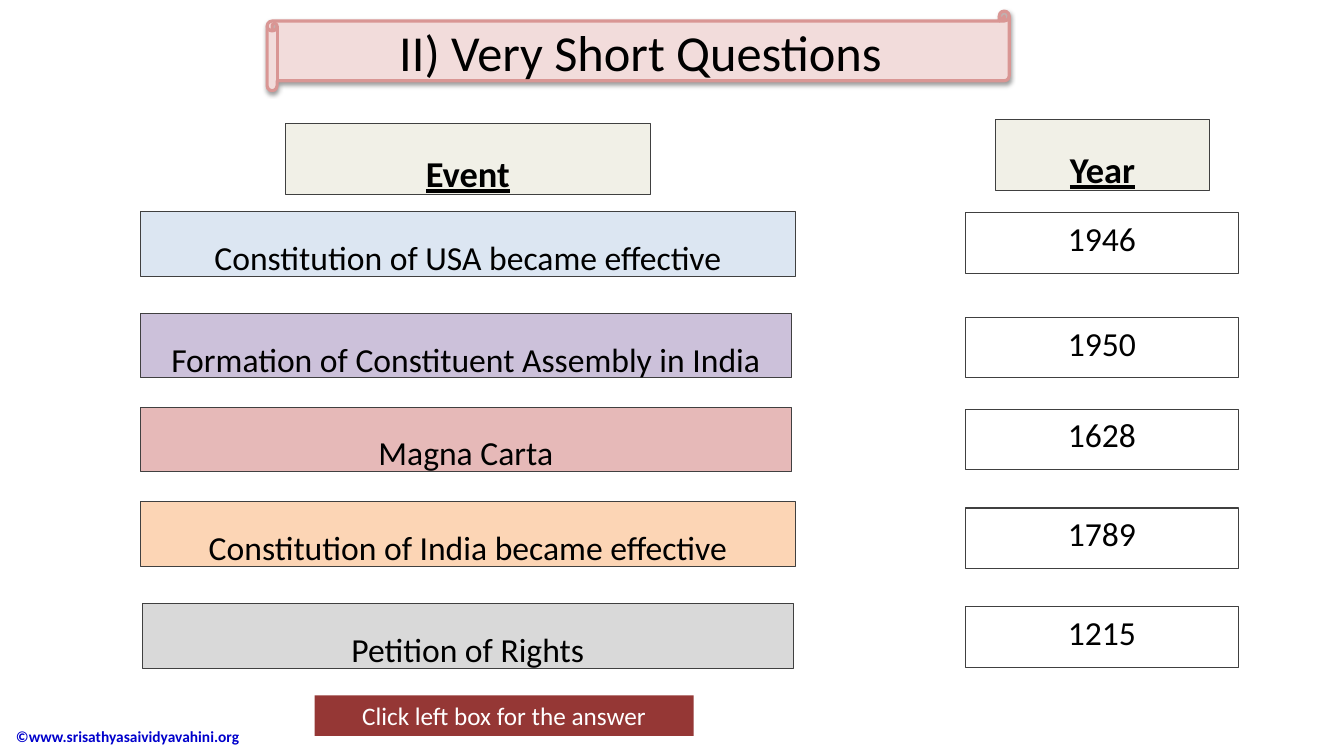
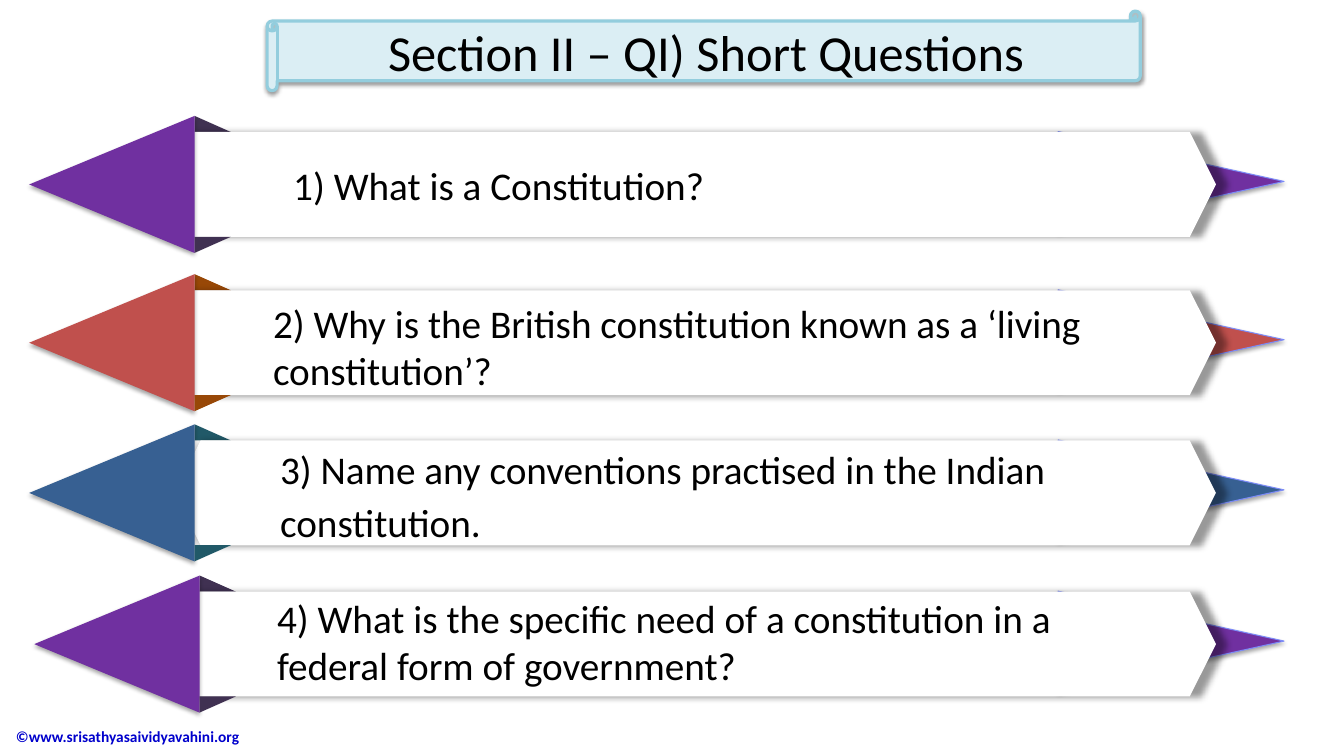
from dataclasses import dataclass
from typing import NamedTuple, Optional

from lxml.etree import SubElement
from pptx import Presentation
from pptx.dml.color import RGBColor
from pptx.enum.shapes import MSO_SHAPE as Preset
from pptx.enum.text import MSO_ANCHOR as Anchor, MSO_AUTO_SIZE as AutoSize, PP_ALIGN as Align
from pptx.oxml.ns import qn
from pptx.util import Inches, Pt

FONT = "Calibri"
COLORS = {
    "black": "000000", "white": "FFFFFF", "footer": "0000CC", "outline": "404040",
    "rose": "F2DCDB", "rose_edge": "D99694", "aqua": "DBEEF4", "aqua_edge": "93CDDD",
    "header": "F1F0E7", "hint": "953735",
    "blue": "DCE6F2", "lilac": "CCC1DA", "pink": "E6B9B8", "orange": "FCD5B5", "grey": "D9D9D9",
    "purple": "7030A0", "purple_fold": "403152", "red": "C0504D", "red_fold": "984807",
    "navy": "376092", "navy_fold": "215968", "tail_edge": "7C8BF8",
}


class Shadow(NamedTuple):
    alpha: int  # percent
    blur: float  # points
    distance: float  # points
    direction: int  # degrees
    stretch: int = 100  # horizontal scale in percent


TITLE_SHADOW = Shadow(38, 3.1, 1.6, 90)
TIP_SHADOW = Shadow(35, 3.1, 1.8, 90)
BAND_SHADOW = Shadow(40, 5, 0, 0, 101)


class Area(NamedTuple):
    left: float
    top: float
    width: float
    height: float

    def lengths(self) -> list:
        return [Inches(value) for value in self]


@dataclass
class MatchRow:
    event: str
    event_area: Area
    color: str
    year: str
    year_top: float


@dataclass
class Question:
    text: str
    text_area: Area
    band_left: float
    band_top: float
    color: str
    fold_left: float = 1.93
    spacing: Optional[float] = None


MATCH_ROWS = [
    MatchRow("Constitution of USA became effective", Area(1.39, 2.1, 6.5, 0.64), "blue", "1946", 2.11),
    MatchRow("Formation of Constituent Assembly in India", Area(1.39, 3.11, 6.46, 0.64), "lilac", "1950", 3.15),
    MatchRow("Magna Carta", Area(1.39, 4.04, 6.46, 0.64), "pink", "1628", 4.06),
    MatchRow("Constitution of India became effective", Area(1.39, 4.98, 6.5, 0.64), "orange", "1789", 5.04),
    MatchRow("Petition of Rights", Area(1.41, 5.99, 6.46, 0.64), "grey", "1215", 6.02),
]
HEADERS = {"Event": Area(2.83, 1.23, 3.62, 0.7), "Year": Area(9.87, 1.19, 2.13, 0.7)}

QUESTIONS = [
    Question("1) What is a Constitution?", Area(2.81, 1.55, 8.35, 0.57), 1.67, 1.31, "purple"),
    Question("2) Why is the British constitution known as a ‘living constitution’?",
             Area(2.61, 2.92, 9.93, 1.04), 1.47, 2.88, "red"),
    Question("3) Name any conventions practised in the Indian constitution.",
             Area(2.68, 4.31, 9.18, 1.14), 1.73, 4.37, "navy", spacing=1.13),
    Question("4) What is the specific need of a constitution in a federal form of government?",
             Area(2.65, 5.85, 8.54, 1.04), 1.47, 5.87, "purple", fold_left=1.98),
]
BAND_RIGHT, BAND_HEIGHT = 12.06, 1.04


def rgb(name: str) -> RGBColor:
    return RGBColor.from_string(COLORS[name])


def write(shape, text: str, *, size: float, color="black", bold=False, underline=False,
          align=Align.LEFT, anchor=Anchor.TOP, spacing=None, grow=False) -> None:
    frame = shape.text_frame
    frame.word_wrap = True
    frame.vertical_anchor = anchor
    frame.auto_size = AutoSize.SHAPE_TO_FIT_TEXT if grow else AutoSize.NONE
    para = frame.paragraphs[0]
    para.alignment = align
    if spacing:
        para.line_spacing = spacing
    span = para.add_run()
    span.text = text
    font = span.font
    font.name, font.size, font.bold, font.underline = FONT, Pt(size), bold, underline
    font.color.rgb = rgb(color)


def add_shadow(shape, shadow: Shadow) -> None:
    effects = shape.element.spPr.find(qn("a:effectLst"))
    outer = SubElement(effects, qn("a:outerShdw"), {
        "blurRad": str(int(Pt(shadow.blur))), "dist": str(int(Pt(shadow.distance))),
        "dir": str(shadow.direction * 60000), "sx": str(shadow.stretch * 1000),
        "algn": "l" if shadow.stretch != 100 else "ctr", "rotWithShape": "0"})
    tint = SubElement(outer, qn("a:srgbClr"), val=COLORS["black"])
    SubElement(tint, qn("a:alpha"), val=str(shadow.alpha * 1000))


def add_shape(shapes, preset, area: Area, *, fill=None, line=None, line_width=0.75,
              rotation=0, flip=False, shadow: Optional[Shadow] = None):
    shape = shapes.add_shape(preset, *area.lengths())
    shape.shadow.inherit = False
    if fill:
        shape.fill.solid()
        shape.fill.fore_color.rgb = rgb(fill)
    else:
        shape.fill.background()
    if line:
        shape.line.color.rgb = rgb(line)
        shape.line.width = Pt(line_width)
    else:
        shape.line.fill.background()
    shape.rotation = rotation
    if flip:
        shape.element.spPr.xfrm.set("flipV", "1")
    if shadow:
        add_shadow(shape, shadow)
    return shape


def add_page(deck, title: str, title_width: float, color: str):
    """Add a blank slide with the site footer and a scroll title."""
    page = deck.slides.add_slide(deck.slide_layouts[6])
    footer = page.shapes.add_textbox(*Area(0.06, 7.1, 3.53, 0.41).lengths())
    write(footer, "©www.srisathyasaividyavahini.org", size=11, color="footer", bold=True,
          anchor=Anchor.MIDDLE)
    scroll = add_shape(page.shapes, Preset.HORIZONTAL_SCROLL, Area(2.65, 0.11, title_width, 0.79),
                       fill=color, line=f"{color}_edge", line_width=2.25, shadow=TITLE_SHADOW)
    write(scroll, title, size=36, align=Align.CENTER, anchor=Anchor.MIDDLE)
    return page


def add_label(page, text: str, area: Area, *, fill=None, line="outline", **text_format) -> None:
    box = add_shape(page.shapes, Preset.RECTANGLE, area, fill=fill, line=line)
    write(box, text, align=Align.CENTER, grow=True, **text_format)


def add_question(page, question: Question) -> None:
    """Draw a folded arrow band and the question on it."""
    top, fold_left = question.band_top, question.fold_left
    fold_color = f"{question.color}_fold"
    arrow = page.shapes.add_group_shape().shapes
    add_shape(arrow, Preset.ISOSCELES_TRIANGLE, Area(11.12, top - 0.63, 0.99, 2.24), rotation=90,
              fill=question.color, line="tail_edge", shadow=TIP_SHADOW)
    add_shape(arrow, Preset.RIGHT_TRIANGLE, Area(fold_left, top - 0.16, 0.36, 0.16), fill=fold_color)
    add_shape(arrow, Preset.HEXAGON,
              Area(question.band_left, top, BAND_RIGHT - question.band_left, BAND_HEIGHT),
              fill="white", shadow=BAND_SHADOW)
    add_shape(arrow, Preset.ISOSCELES_TRIANGLE, Area(fold_left - 1.5, top - 0.3, 1.36, 1.64),
              rotation=270, fill=question.color, shadow=TIP_SHADOW)
    add_shape(arrow, Preset.RIGHT_TRIANGLE, Area(fold_left, top + BAND_HEIGHT, 0.36, 0.16),
              fill=fold_color, flip=True)
    box = page.shapes.add_textbox(*question.text_area.lengths())
    write(box, question.text, size=28, spacing=question.spacing, grow=True)


def build_matching(deck) -> None:
    page = add_page(deck, "II) Very Short Questions", 7.36, "rose")
    for text, area in HEADERS.items():
        add_label(page, text, area, fill="header", size=26, bold=True, underline=True, spacing=1.5)
    for row in MATCH_ROWS:
        add_label(page, row.event, row.event_area, fill=row.color, size=24, spacing=1.5)
        add_label(page, row.year, Area(9.58, row.year_top, 2.7, 0.6), size=24)
    add_label(page, "Click left box for the answer", Area(3.12, 6.9, 3.76, 0.4),
              fill="hint", line=None, size=18, color="white")


def build_questions(deck) -> None:
    page = add_page(deck, "Section II – QI) Short Questions", 8.66, "aqua")
    for question in QUESTIONS:
        add_question(page, question)


def main() -> None:
    deck = Presentation()
    deck.slide_width, deck.slide_height = Inches(13.33), Inches(7.5)
    build_matching(deck)
    build_questions(deck)
    deck.save("out.pptx")


if __name__ == "__main__":
    main()
